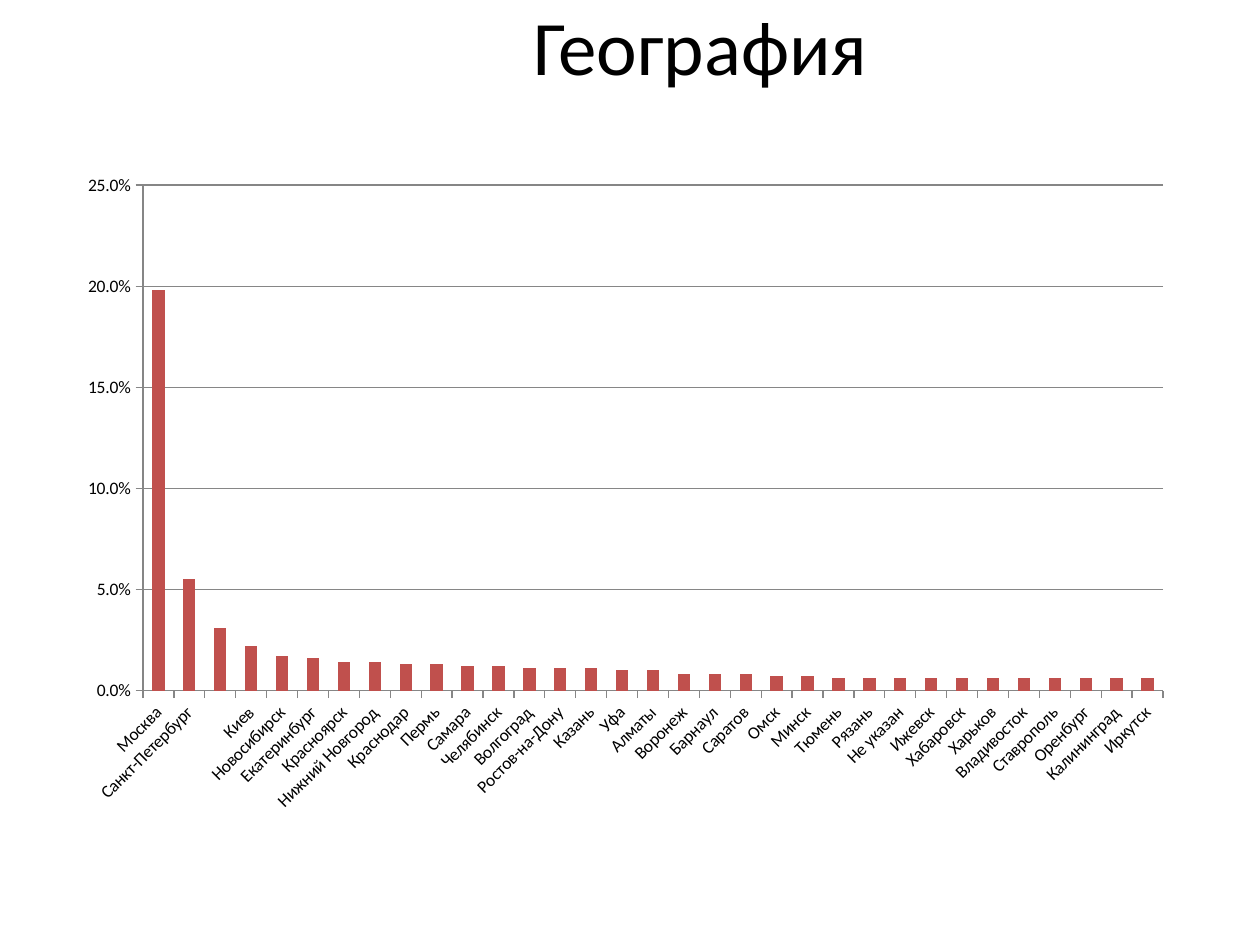
from dataclasses import dataclass

from lxml import etree
from pptx import Presentation
from pptx.chart import data as cd
from pptx.dml.color import RGBColor
from pptx.enum import chart as ch, text as tx
from pptx.oxml import ns
from pptx.util import Cm, Pt


@dataclass(frozen=True)
class Theme:
    font: str = "Calibri"
    ink: str = "000000"
    bar: str = "C0504D"
    grid: str = "868686"
    title: int = 44
    label: int = 10


THEME = Theme()

# Share of each city, in percent
SHARES = [
    ("Москва", 19.8), ("Санкт-Петербург", 5.5), ("", 3.1), ("Киев", 2.2),
    ("Новосибирск", 1.7), ("Екатеринбург", 1.6), ("Красноярск", 1.4),
    ("Нижний Новгород", 1.4), ("Краснодар", 1.3), ("Пермь", 1.3),
    ("Самара", 1.2), ("Челябинск", 1.2), ("Волгоград", 1.1),
    ("Ростов-на-Дону", 1.1), ("Казань", 1.1), ("Уфа", 1.0), ("Алматы", 1.0),
    ("Воронеж", 0.8), ("Барнаул", 0.8), ("Саратов", 0.8), ("Омск", 0.7),
    ("Минск", 0.7), ("Тюмень", 0.6), ("Рязань", 0.6), ("Не указан", 0.6),
    ("Ижевск", 0.6), ("Хабаровск", 0.6), ("Харьков", 0.6),
    ("Владивосток", 0.6), ("Ставрополь", 0.6), ("Оренбург", 0.6),
    ("Калининград", 0.6), ("Иркутск", 0.6),
]


def style(font, size, color):
    font.name = THEME.font
    font.size = Pt(size)
    font.color.rgb = RGBColor.from_string(color)


def write(slide, box, words, size=THEME.label, color=THEME.ink,
          align=tx.PP_ALIGN.CENTER, anchor=tx.MSO_ANCHOR.MIDDLE):
    frame = slide.shapes.add_textbox(*map(Cm, box)).text_frame
    frame.word_wrap = True
    frame.vertical_anchor = anchor
    par = frame.paragraphs[0]
    par.alignment = align
    run = par.add_run()
    run.text = words
    style(run.font, size, color)


def rule(line):
    line.color.rgb = RGBColor.from_string(THEME.grid)
    line.width = Pt(0.75)


def fix_plot(chart, **parts):
    """Set the inner plot area as fractions of the chart."""
    plot = chart.plots[0]._element.getparent()
    for old in plot.findall(ns.qn("c:layout")):
        plot.remove(old)
    layout = etree.Element(ns.qn("c:layout"))
    manual = etree.SubElement(layout, ns.qn("c:manualLayout"))
    modes = dict(layoutTarget="inner", xMode="edge", yMode="edge")
    for tag, val in {**modes, **parts}.items():
        etree.SubElement(manual, ns.qn("c:" + tag)).set("val", str(val))
    plot.insert(0, layout)


def add_bars(slide, box):
    data = cd.CategoryChartData(number_format="0.0%")
    data.categories = [city for city, _ in SHARES]
    data.add_series("Series 1", [round(pct / 100, 3) for _, pct in SHARES])
    chart = slide.shapes.add_chart(
        ch.XL_CHART_TYPE.COLUMN_CLUSTERED, *map(Cm, box), data).chart
    chart.has_legend = chart.has_title = False
    style(chart.font, THEME.label, THEME.ink)

    # Bars
    plot = chart.plots[0]
    plot.vary_by_categories = False
    plot.gap_width = 150
    fill = plot.series[0].format.fill
    fill.solid()
    fill.fore_color.rgb = RGBColor.from_string(THEME.bar)

    # Axes
    for axis in (chart.category_axis, chart.value_axis):
        axis.major_tick_mark = ch.XL_TICK_MARK.OUTSIDE
        axis.minor_tick_mark = ch.XL_TICK_MARK.NONE
        rule(axis.format.line)
    names, scale = chart.category_axis, chart.value_axis
    style(names.tick_labels.font, THEME.label, THEME.ink)
    turn = names._element.find(ns.qn("c:txPr")).find(ns.qn("a:bodyPr"))
    turn.set("rot", str(-45 * 60000))
    turn.set("vert", "horz")
    scale.minimum_scale, scale.maximum_scale = 0, 0.25
    scale.major_unit = 0.05
    scale.tick_labels.number_format = "0.0%"
    scale.tick_labels.number_format_is_linked = False
    scale.has_major_gridlines = True
    rule(scale.major_gridlines.format.line)
    fix_plot(chart, x=0.07, y=0.03, w=0.91, h=0.76)


def geo_slide(deck, box):
    left, top, wide, high = box
    slide = deck.slides.add_slide(deck.slide_layouts[6])
    # Title
    write(slide, (left + 2.69, top + 0.13, wide - 2.54, 1.55),
          "География", size=THEME.title)
    # Chart
    add_bars(slide, (left + 1.3, top + 3.33, wide - 2.8, high - 5.64))


def main():
    deck = Presentation()
    wide, high = 25.4, 19.05
    deck.slide_width, deck.slide_height = Cm(wide), Cm(high)
    geo_slide(deck, (0, 0, wide, high))
    deck.save("out.pptx")


if __name__ == "__main__":
    main()
